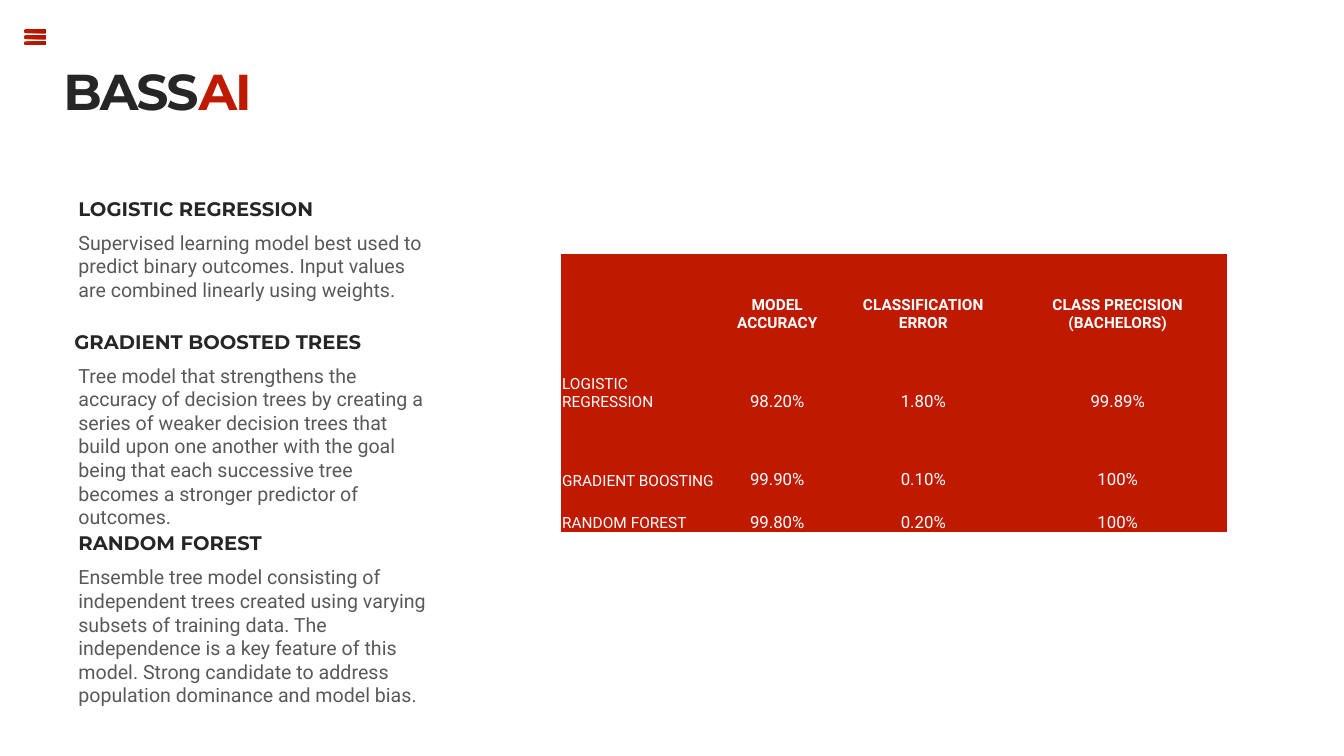
from dataclasses import dataclass
from typing import Any

from pptx import Presentation
from pptx.dml.color import RGBColor
from pptx.enum.text import MSO_ANCHOR, MSO_AUTO_SIZE, PP_ALIGN
from pptx.oxml.ns import qn
from pptx.util import Emu, Pt

TOP, BOTTOM = MSO_ANCHOR.TOP, MSO_ANCHOR.BOTTOM
LEFT, CENTER = PP_ALIGN.LEFT, PP_ALIGN.CENTER
FIT_SHAPE = MSO_AUTO_SIZE.SHAPE_TO_FIT_TEXT

EMU_PER_PX = 9144
RED, DARK_RED = "BF1900", "AC1600"
INK, GREY, WHITE = "262626", "595959", "FFFFFF"
HEADING_FONT, BODY_FONT = "Montserrat", "Roboto"
PLAIN_TABLE_STYLE = "{2D5ABB26-0587-4C30-8999-92F81FD0307C}"


@dataclass(frozen=True)
class TextStyle:
    font: str
    size: int
    color: str
    bold: bool = False


@dataclass(frozen=True)
class ModelNote:
    heading: str
    description: str
    heading_left: int
    top: int
    description_height: int


TITLE = TextStyle(HEADING_FONT, 36, INK, True)
TITLE_ACCENT = TextStyle(HEADING_FONT, 36, RED, True)
HEADING = TextStyle(HEADING_FONT, 14, INK, True)
DESCRIPTION = TextStyle(BODY_FONT, 14, GREY)
COLUMN_LABEL = TextStyle(BODY_FONT, 11, WHITE, True)
ROW_LABEL = TextStyle(BODY_FONT, 11, WHITE)
SCORE = TextStyle(BODY_FONT, 12, WHITE)

HEADING_HEIGHT = 34
NOTES = [
    ModelNote(
        "LOGISTIC REGRESSION",
        "Supervised learning model best used to predict binary outcomes. "
        "Input values are combined linearly using weights.",
        68, 190, 81),
    ModelNote(
        "GRADIENT BOOSTED TREES",
        "Tree model that strengthens the accuracy of decision trees by creating "
        "a series of weaker decision trees that build upon one another with the "
        "goal being that each successive tree becomes a stronger predictor of outcomes.",
        64, 322, 151),
    ModelNote(
        "RANDOM FOREST",
        "Ensemble tree model consisting of independent trees created using varying "
        "subsets of training data. The independence is a key feature of this model. "
        "Strong candidate to address population dominance and model bias.",
        68, 522, 151),
]
SCORES = [
    ["", "MODEL ACCURACY", "CLASSIFICATION ERROR", "CLASS PRECISION (BACHELORS)"],
    ["LOGISTIC REGRESSION", "98.20%", "1.80%", "99.89%"],
    ["GRADIENT BOOSTING", "99.90%", "0.10%", "100%"],
    ["RANDOM FOREST", "99.80%", "0.20%", "100%"],
]
COLUMN_WIDTHS = [154, 121, 169, 217]
ROW_HEIGHTS = [78, 78, 78, 42]


def px(length: int) -> Emu:
    return Emu(length * EMU_PER_PX)


def rgb(color: str) -> RGBColor:
    return RGBColor.from_string(color)


def apply(target: Any, values: dict[str, Any]) -> None:
    for attribute, value in values.items():
        setattr(target, attribute, value)


def add_run(paragraph: Any, text: str, style: TextStyle) -> Any:
    run = paragraph.add_run()
    run.text = text
    apply(run.font, {"name": style.font, "size": Pt(style.size), "bold": style.bold})
    run.font.color.rgb = rgb(style.color)
    return run


def add_text(slide: Any, text: str, style: TextStyle,
             left: int, top: int, width: int, height: int) -> None:
    box = slide.shapes.add_textbox(px(left), px(top), px(width), px(height))
    apply(box.text_frame, {"word_wrap": True, "auto_size": FIT_SHAPE})
    add_run(box.text_frame.paragraphs[0], text, style)


def add_title(slide: Any) -> None:
    title = slide.shapes.title
    apply(title, {"left": px(53), "top": px(55), "width": px(571), "height": px(71)})
    apply(title.text_frame,
          {"word_wrap": True, "auto_size": FIT_SHAPE, "vertical_anchor": TOP})
    paragraph = title.text_frame.paragraphs[0]
    paragraph.alignment = LEFT
    for text, style in (("BASS", TITLE), ("AI", TITLE_ACCENT)):
        run = add_run(paragraph, text, style)
        run.font._element.set("spc", "-150")


def add_menu_icon(slide: Any) -> None:
    left, top, width, bar, pitch = 24, 29, 22, 4, 6
    outline = [(1, 0), (width - 1, 0), (width, 1), (width, bar - 1),
               (width - 1, bar), (1, bar), (0, bar - 1), (0, 1)]
    builder = slide.shapes.build_freeform(left + 1, top, scale=EMU_PER_PX)
    for index in range(3):
        points = [(left + x, top + index * pitch + y) for x, y in outline]
        if index:
            builder.move_to(*points[0])
        builder.add_line_segments(points[1:], close=True)
    icon = builder.convert_to_shape()
    icon.shadow.inherit = False
    icon.line.fill.background()
    icon.fill.gradient()
    icon.fill.gradient_angle = 0
    for stop, color in zip(icon.fill.gradient_stops, (RED, DARK_RED)):
        stop.color.rgb = rgb(color)


def score_style(row: int, column: int) -> TextStyle:
    if row == 0:
        return COLUMN_LABEL
    return SCORE if column else ROW_LABEL


def add_score_table(slide: Any) -> None:
    table = slide.shapes.add_table(
        len(ROW_HEIGHTS), len(COLUMN_WIDTHS), px(557), px(252),
        px(sum(COLUMN_WIDTHS)), px(sum(ROW_HEIGHTS))).table
    apply(table, {"first_row": False, "horz_banding": False})
    table._tbl.tblPr.find(qn("a:tableStyleId")).text = PLAIN_TABLE_STYLE
    for column, width in zip(table.columns, COLUMN_WIDTHS):
        column.width = px(width)
    for row, height in zip(table.rows, ROW_HEIGHTS):
        row.height = px(height)
    for row, texts in enumerate(SCORES):
        for column, text in enumerate(texts):
            cell = table.cell(row, column)
            apply(cell, {"margin_left": px(1), "margin_right": px(1),
                         "margin_top": px(1), "margin_bottom": px(0),
                         "vertical_anchor": BOTTOM})
            cell.fill.solid()
            cell.fill.fore_color.rgb = rgb(RED)
            if text:
                paragraph = cell.text_frame.paragraphs[0]
                paragraph.alignment = CENTER if column else LEFT
                add_run(paragraph, text, score_style(row, column))


def main() -> None:
    presentation = Presentation()
    apply(presentation, {"slide_width": px(1334), "slide_height": px(750)})
    slide = presentation.slides.add_slide(presentation.slide_layouts[5])
    add_menu_icon(slide)
    add_title(slide)
    for note in NOTES:
        add_text(slide, note.heading, HEADING,
                 note.heading_left, note.top, 380, HEADING_HEIGHT)
        add_text(slide, note.description, DESCRIPTION,
                 68, note.top + HEADING_HEIGHT, 373, note.description_height)
    add_score_table(slide)
    presentation.save("out.pptx")


if __name__ == "__main__":
    main()
